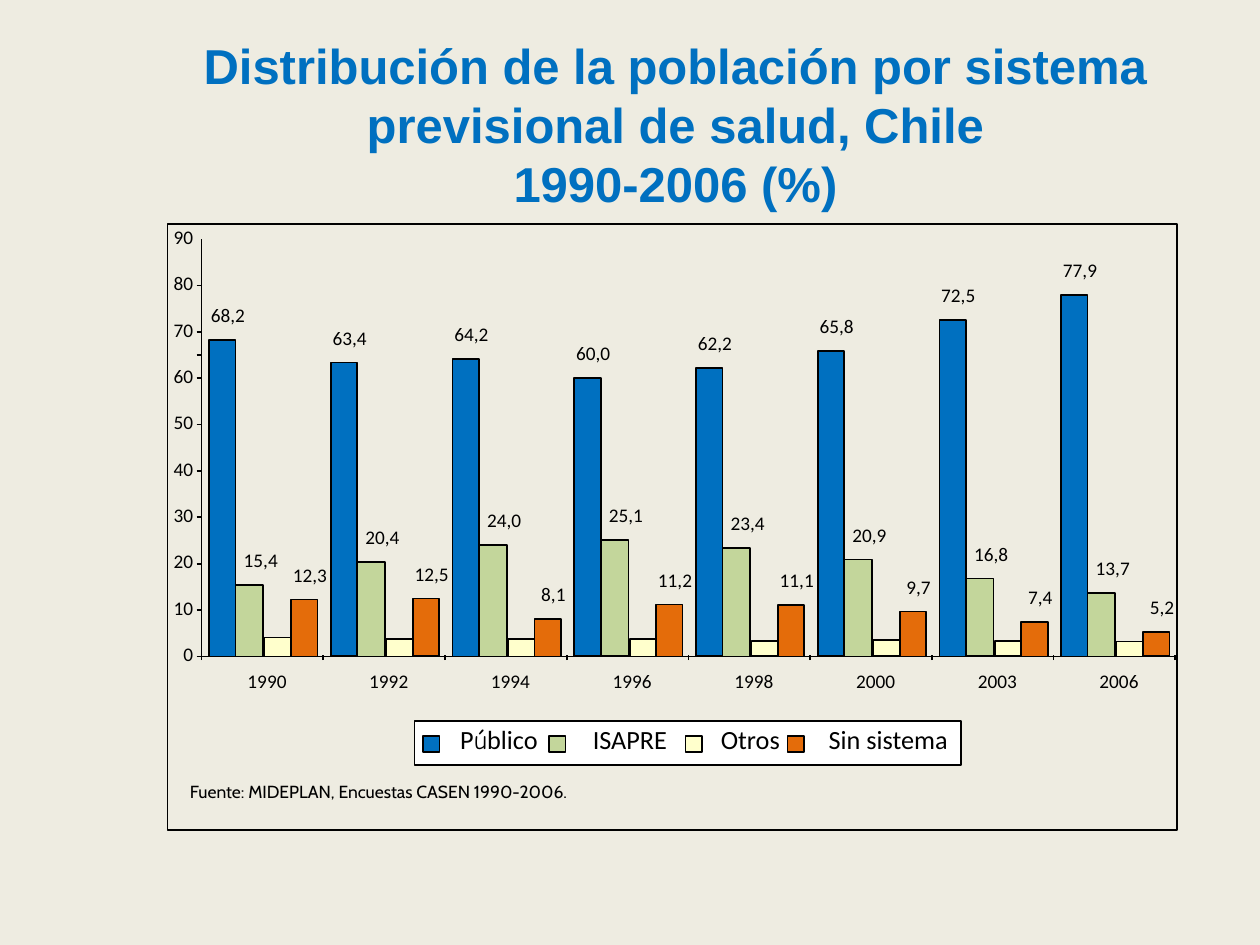
from pptx import Presentation
from pptx.dml.color import RGBColor
from pptx.enum.shapes import MSO_CONNECTOR as Link, MSO_SHAPE as Kind
from pptx.enum.text import MSO_ANCHOR as Anchor, MSO_AUTO_SIZE as Auto, PP_ALIGN as Align
from pptx.oxml.ns import qn
from pptx.util import Inches, Pt

COLORS = {
    "page": "EEECE1", "title": "0070C0", "ink": "000000", "white": "FFFFFF",
    "Público": "0070C0", "ISAPRE": "C3D69B", "Otros": "FFFFCC", "Sin sistema": "E46C0A",
}


def color(name):
    return RGBColor.from_string(COLORS[name])


def write(text, at, box=None, size=11, font="Calibri", ink="ink", bold=False,
          align=Align.CENTER, inset=(0, 0), wrap=False, lead=0.9, fit=Auto.SHAPE_TO_FIT_TEXT):
    """Write lines of text; a line is a string or a list of (text, font) runs."""
    area = [Inches(n) for n in at]
    if box is None:
        box = slide.shapes.add_textbox(*area)
    box.left, box.top, box.width, box.height = area
    frame = box.text_frame
    frame.word_wrap, frame.auto_size = wrap, fit
    frame.margin_left = frame.margin_right = Inches(inset[0])
    frame.margin_top = frame.margin_bottom = Inches(inset[1])
    for i, line in enumerate(text if isinstance(text, list) else [text]):
        para = frame.add_paragraph() if i else frame.paragraphs[0]
        para.alignment, para.line_spacing = align, lead
        for part, face in [(line, font)] if isinstance(line, str) else line:
            run = para.add_run()
            run.text = part
            run.font.size, run.font.name, run.font.bold = Pt(size), face, bold
            run.font.color.rgb = color(ink)
    return box


deck = Presentation()
deck.slide_width, deck.slide_height = Inches(10), Inches(7.5)
slide = deck.slides.add_slide(deck.slide_layouts[5])
slide.background.fill.solid()
slide.background.fill.fore_color.rgb = color("page")

# Title
title = write(["Distribución de la población por sistema previsional de salud, Chile",
               "1990-2006 (%)"], (1.3, 0.36, 8.12, 1.25), box=slide.shapes.title,
              size=28, font="Arial", ink="title", bold=True, inset=(0.1, 0.05),
              wrap=True, lead=1.0, fit=Auto.NONE)
title.text_frame.vertical_anchor = Anchor.MIDDLE

# Data: the three labelled systems; "Otros" is what is left of 100 %
years = [1990, 1992, 1994, 1996, 1998, 2000, 2003, 2006]
public = [68.2, 63.4, 64.2, 60.0, 62.2, 65.8, 72.5, 77.9]
isapre = [15.4, 20.4, 24.0, 25.1, 23.4, 20.9, 16.8, 13.7]
none = [12.3, 12.5, 8.1, 11.2, 11.1, 9.7, 7.4, 5.2]
others = [100 - sum(row) for row in zip(public, isapre, none)]

# Plot scale, in inches
LEFT, BASE, STEP, UNIT = 1.6, 5.21, 0.966, 0.0368
RIGHT = LEFT + STEP * len(years)

# Boxes: frame, bars, legend panel and keys
boxes = [(1.33, 1.78, 8.01, 4.81, None)]
series = [  # name, values, bar offset, bar width, label centre
    ("Público", public, 0.06, 0.21, 0.15),
    ("ISAPRE", isapre, 0.27, 0.22, 0.20),
    ("Otros", others, 0.50, 0.21, None),
    ("Sin sistema", none, 0.71, 0.21, 0.15),
]
labels = []
for name, values, shift, width, mid in series:
    for i, value in enumerate(values):
        x, high = LEFT + i * STEP + shift, value * UNIT
        boxes.append((x, BASE - high, width, high, name))
        if mid:
            text = f"{value:.1f}".replace(".", ",")
            wide = 0.3 if value >= 10 else 0.21
            labels.append((text, x + mid - wide / 2, BASE - high - 0.27, wide))

legend = [  # name, key left, text width
    ("Público", 3.36, 0.68), ("ISAPRE", 4.36, 0.76),
    ("Otros", 5.44, 0.51), ("Sin sistema", 6.25, 1.08),
]
boxes.append((3.29, 5.72, 4.34, 0.35, "white"))
boxes += [(x, 5.84, 0.13, 0.13, name) for name, x, wide in legend]

for x, y, width, high, fill in boxes:
    rect = slide.shapes.add_shape(Kind.RECTANGLE, Inches(x), Inches(y), Inches(width), Inches(high))
    rect.shadow.inherit = False
    rect.line.color.rgb, rect.line.width = color("ink"), Pt(1)
    if fill:
        rect.fill.solid()
        rect.fill.fore_color.rgb = color(fill)
    else:
        rect.fill.background()

# Axes and ticks
lines = [(LEFT, 1.9, LEFT, BASE), (LEFT, BASE, RIGHT, BASE)]
for mark in [*range(0, 90, 10), 65]:
    lines.append((1.56, BASE - mark * UNIT, LEFT, BASE - mark * UNIT))
for i in range(len(years) + 1):
    lines.append((LEFT + i * STEP, 5.24, LEFT + i * STEP, 5.2))
for ends in lines:
    line = slide.shapes.add_connector(Link.STRAIGHT, *[Inches(n) for n in ends])
    line.line.color.rgb, line.line.width = color("ink"), Pt(1)
    props = line._element.spPr
    props.append(props.makeelement(qn("a:effectLst"), {}))

# Labels of bars and axes
for mark in range(0, 100, 10):
    wide = 0.17 if mark else 0.09
    labels.append((str(mark), 1.54 - wide, BASE - mark * UNIT - 0.09, wide))
for i, year in enumerate(years):
    labels.append((str(year), 1.95 + i * STEP, 5.33, 0.34))
for text, x, y, wide in labels:
    write(text, (x, y, wide, 0.16))

# Legend text
for name, x, wide in legend:
    text = name
    if name == "Público":
        text = [[("P", "Calibri"), ("ú", "Comic Neue"), ("blico", "Calibri")]]
    write(text, (x + 0.26, 5.77, wide, 0.23), size=15)

# Source note
write("Fuente: MIDEPLAN, Encuestas CASEN 1990-2006.", (1.41, 6.15, 3.4, 0.27),
      size=10, font="Cabin", align=Align.LEFT, inset=(0.1, 0.05), lead=1.0)

deck.save("out.pptx")
